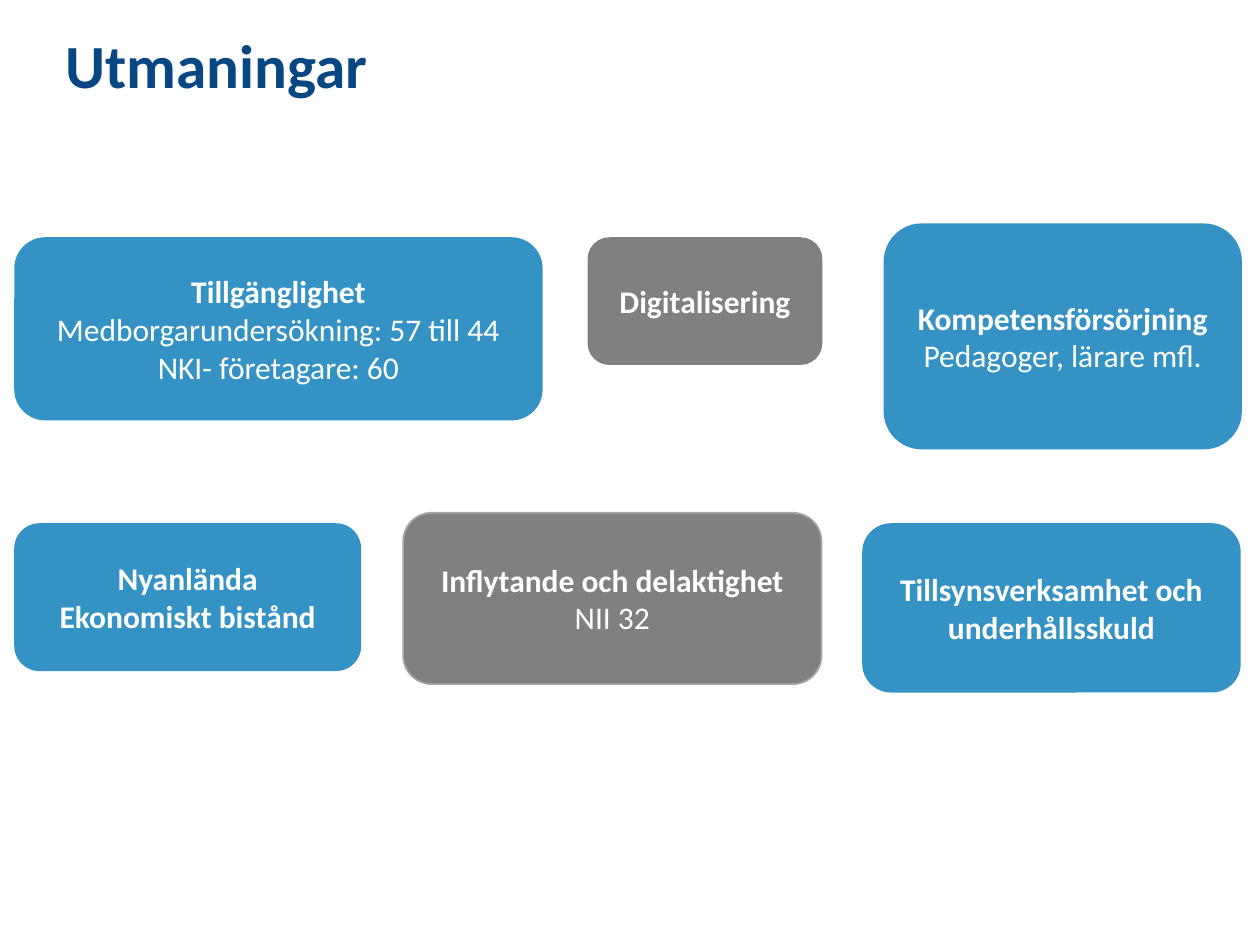
from pptx import Presentation
from pptx.dml.color import RGBColor
from pptx.enum.shapes import MSO_SHAPE
from pptx.enum.text import MSO_ANCHOR, PP_ALIGN
from pptx.util import Inches, Pt

ROUNDED = MSO_SHAPE.ROUNDED_RECTANGLE
TOP, MIDDLE = MSO_ANCHOR.TOP, MSO_ANCHOR.MIDDLE
LEFT, CENTER = PP_ALIGN.LEFT, PP_ALIGN.CENTER
TITLE_ONLY = 5
FONT = "Calibri"
COLORS = {
    "navy": "084782",
    "blue": "3493C4",
    "gray": "808080",
    "light_gray": "A6A6A6",
    "white": "FFFFFF",
}
CHALLENGES = [
    ((7.02, 1.78, 2.83, 1.78), "blue", "blue",
     ["Kompetensförsörjning"], ["Pedagoger, lärare mfl."]),
    ((3.2, 4.07, 3.32, 1.36), "gray", "light_gray",
     ["Inflytande och delaktighet"], ["NII 32"]),
    ((0.12, 4.16, 2.74, 1.16), "blue", "blue",
     ["Nyanlända", "Ekonomiskt bistånd"], []),
    ((6.85, 4.16, 2.99, 1.33), "blue", "blue",
     ["Tillsynsverksamhet och underhållsskuld"], []),
    ((0.12, 1.89, 4.18, 1.44), "blue", "blue",
     ["Tillgänglighet"],
     ["Medborgarundersökning: 57 till 44", "NKI- företagare: 60"]),
    ((4.67, 1.89, 1.85, 1), "gray", "gray", ["Digitalisering"], []),
]


def color(name):
    """Return the palette colour with this name."""
    return RGBColor.from_string(COLORS[name])


def write_text(frame, headings, details=(), *, size, ink, align, anchor, spacing=1.0):
    """Write bold headings followed by regular detail lines."""
    frame.word_wrap = True
    frame.vertical_anchor = anchor
    for index, line in enumerate([*headings, *details]):
        paragraph = frame.paragraphs[0] if index == 0 else frame.add_paragraph()
        paragraph.alignment = align
        paragraph.line_spacing = spacing
        run = paragraph.add_run()
        run.text = line
        run.font.name = FONT
        run.font.size = Pt(size)
        run.font.bold = index < len(headings)
        run.font.color.rgb = color(ink)


def add_title(slide, text):
    """Place and format the slide title."""
    title = slide.shapes.title
    title.left, title.top = Inches(0.42), Inches(0.28)
    title.width, title.height = Inches(8.49), Inches(0.77)
    write_text(title.text_frame, [text], size=35, ink="navy",
               align=LEFT, anchor=TOP, spacing=0.8)


def add_challenge(slide, bounds, fill, outline, headings, details):
    """Add one rounded box describing a challenge."""
    box = slide.shapes.add_shape(ROUNDED, *map(Inches, bounds))
    box.shadow.inherit = False
    box.fill.solid()
    box.fill.fore_color.rgb = color(fill)
    box.line.color.rgb = color(outline)
    box.line.width = Pt(1)
    write_text(box.text_frame, headings, details, size=18, ink="white",
               align=CENTER, anchor=MIDDLE)


def main():
    """Build and save the presentation."""
    deck = Presentation()
    deck.slide_width, deck.slide_height = Inches(10), Inches(7.5)
    slide = deck.slides.add_slide(deck.slide_layouts[TITLE_ONLY])
    add_title(slide, "Utmaningar")
    for challenge in CHALLENGES:
        add_challenge(slide, *challenge)
    deck.save("out.pptx")


if __name__ == "__main__":
    main()
